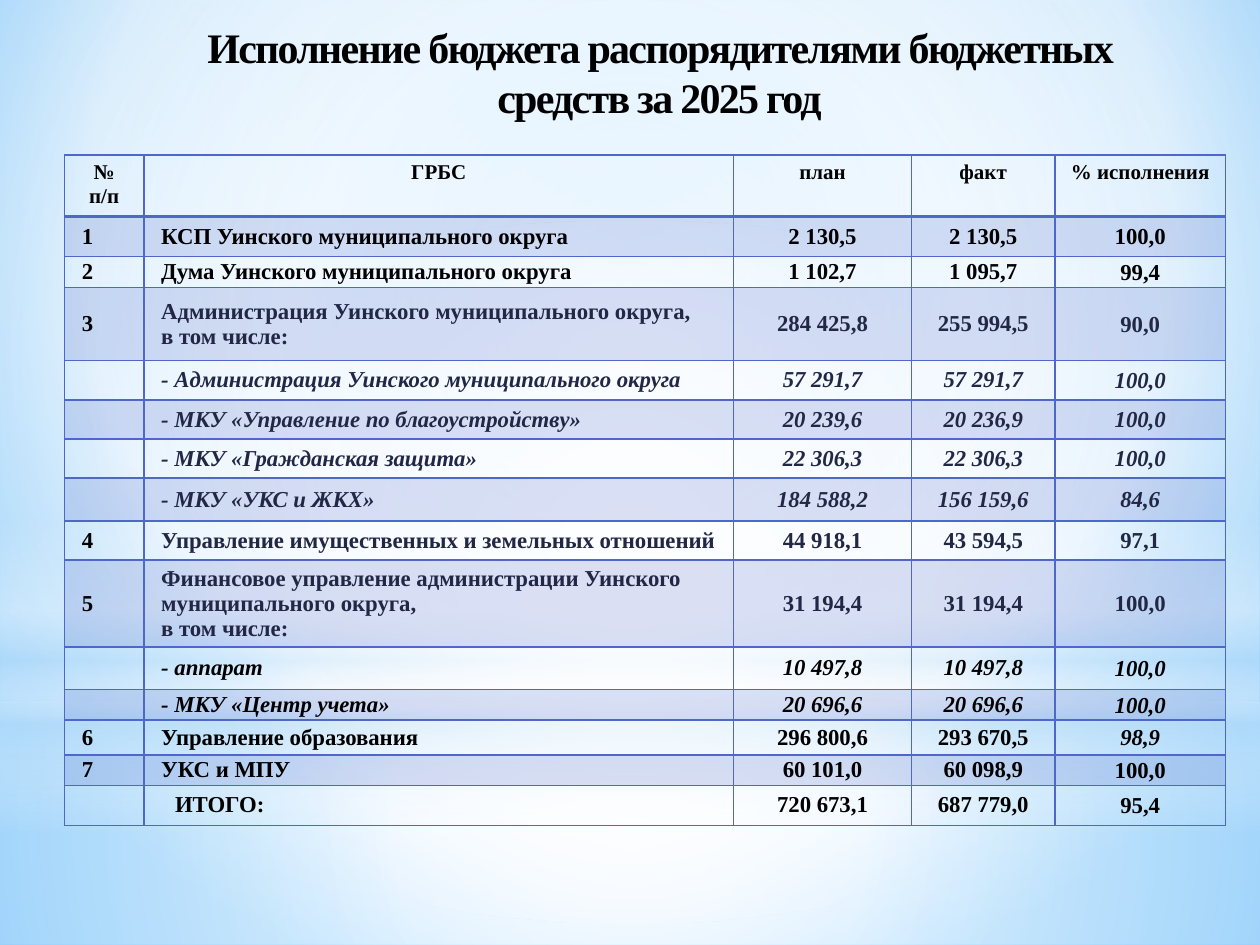
from dataclasses import dataclass
from lxml.etree import SubElement
from pptx import Presentation
from pptx.dml.color import RGBColor
from pptx.enum.shapes import MSO_SHAPE
from pptx.enum.text import MSO_ANCHOR, PP_ALIGN
from pptx.oxml.ns import qn
from pptx.util import Cm, Pt


@dataclass(frozen=True)
class Theme:
    font: str = "Times New Roman"
    black: str = "000000"
    ink: str = "212745"
    accent: str = "4E67C8"
    white: str = "FFFFFF"
    pale: str = "B4DCFA"
    sky: str = "9ED5FF"
    deep: str = "5BB9FF"
    title_size: float = 24
    header_size: float = 12
    body_size: float = 13
    band_opacity: int = 20
    plain_table: str = "{2D5ABB26-0587-4C30-8999-92F81FD0307C}"


CENTRE = (50, 50, 50, 50)
HEADERS = ["№ п/п", "ГРБС", "план", "факт", "% исполнения"]
COLUMN_WIDTHS = [1.6, 11.89, 3.58, 2.9, 3.43]
HEADER_HEIGHT = 1.24
ROWS = [
    (0.81, "1", "КСП Уинского муниципального округа", "2 130,5", "2 130,5", "100,0"),
    (0.63, "2", "Дума Уинского муниципального округа", "1 102,7", "1 095,7", "99,4"),
    (1.47, "3", "Администрация Уинского муниципального округа,\nв том числе:",
     "284 425,8", "255 994,5", "90,0"),
    (0.79, "", "- Администрация Уинского муниципального округа", "57 291,7", "57 291,7", "100,0"),
    (0.79, "", "- МКУ «Управление по благоустройству»", "20 239,6", "20 236,9", "100,0"),
    (0.79, "", "- МКУ «Гражданская защита»", "22 306,3", "22 306,3", "100,0"),
    (0.86, "", "- МКУ «УКС и ЖКХ»", "184 588,2", "156 159,6", "84,6"),
    (0.79, "4", "Управление имущественных и земельных отношений", "44 918,1", "43 594,5", "97,1"),
    (1.75, "5", "Финансовое управление администрации Уинского муниципального округа,\nв том числе:",
     "31 194,4", "31 194,4", "100,0"),
    (0.86, "", "- аппарат", "10 497,8", "10 497,8", "100,0"),
    (0.61, "", "- МКУ «Центр учета»", "20 696,6", "20 696,6", "100,0"),
    (0.71, "6", "Управление образования", "296 800,6", "293 670,5", "98,9"),
    (0.61, "7", "УКС и МПУ", "60 101,0", "60 098,9", "100,0"),
    (0.81, "", "ИТОГО:", "720 673,1", "687 779,0", "95,4"),
]
INK_ROWS = range(3, 10)


class SlideBuilder:
    def __init__(self, page, theme):
        self.page = page
        self.theme = theme

    def gradient(self, fill, host, stops, focus=None):
        fill.gradient()
        grad = next(host.iter(qn("a:gradFill")))
        for child in list(grad):
            grad.remove(child)
        stop_list = SubElement(grad, qn("a:gsLst"))
        for position, color, opacity in stops:
            stop = SubElement(stop_list, qn("a:gs"), pos=str(position * 1000))
            tone = SubElement(stop, qn("a:srgbClr"), val=color)
            SubElement(tone, qn("a:alpha"), val=str(opacity * 1000))
        if focus:
            route = SubElement(grad, qn("a:path"), path="circle")
            sides = {side: str(part * 1000) for side, part in zip("ltrb", focus)}
            SubElement(route, qn("a:fillToRect"), **sides)
        else:
            SubElement(grad, qn("a:lin"), ang="5400000", scaled="0")

    def background(self, stops, focus):
        self.gradient(self.page.background.fill, self.page.element, stops, focus)

    def glow(self, kind, top, height, stops, focus=None):
        shape = self.page.shapes.add_shape(kind, Cm(0), Cm(top), Cm(25.4), Cm(height))
        shape.shadow.inherit = False
        shape.line.fill.background()
        self.gradient(shape.fill, shape.element, stops, focus)

    def span(self, para, text, size, color, italic=False):
        span = para.add_run()
        span.text = text
        span.font.name = self.theme.font
        span.font.size = Pt(size)
        span.font.bold = True
        span.font.italic = italic
        span.font.color.rgb = RGBColor.from_string(color)
        return span

    def title(self, text, left, top, width, height):
        box = self.page.shapes.title
        box.element.getparent().append(box.element)
        box.left, box.top, box.width, box.height = Cm(left), Cm(top), Cm(width), Cm(height)
        box.text_frame.word_wrap = True
        box.text_frame.vertical_anchor = MSO_ANCHOR.TOP
        para = box.text_frame.paragraphs[0]
        para.alignment = PP_ALIGN.CENTER
        span = self.span(para, text, self.theme.title_size, self.theme.black)
        span.font._element.set("spc", "-100")

    def borders(self, cell, bottom):
        properties = cell._tc.get_or_add_tcPr()
        for edge in ("lnL", "lnR", "lnT", "lnB"):
            weight = bottom if edge == "lnB" else 1
            line = SubElement(properties, qn(f"a:{edge}"), w=str(Pt(weight)))
            solid = SubElement(line, qn("a:solidFill"))
            SubElement(solid, qn("a:srgbClr"), val=self.theme.accent)

    def shade(self, cell, banded):
        if not banded:
            cell.fill.background()
            return
        cell.fill.solid()
        cell.fill.fore_color.rgb = RGBColor.from_string(self.theme.accent)
        tone = next(cell._tc.tcPr.find(qn("a:solidFill")).iter(qn("a:srgbClr")))
        SubElement(tone, qn("a:alpha"), val=str(self.theme.band_opacity * 1000))

    def cell(self, cell, text, size, color, italic=False, indent=None):
        for index, line in enumerate(text.split("\n")):
            frame = cell.text_frame
            para = frame.add_paragraph() if index else frame.paragraphs[0]
            if indent is None:
                para.alignment = PP_ALIGN.CENTER
            else:
                para._p.get_or_add_pPr().set("marL", str(Cm(indent)))
            if line:
                self.span(para, line, size, color, italic)
            else:
                SubElement(para._p, qn("a:endParaRPr"), sz=str(size * 100))

    def table(self, left, top):
        theme = self.theme
        heights = [HEADER_HEIGHT] + [row[0] for row in ROWS]
        frame = self.page.shapes.add_table(
            len(heights), len(HEADERS), Cm(left), Cm(top),
            Cm(sum(COLUMN_WIDTHS)), Cm(sum(heights)))
        table = frame.table
        next(frame.element.iter(qn("a:tableStyleId"))).text = theme.plain_table
        for column, width in zip(table.columns, COLUMN_WIDTHS):
            column.width = Cm(width)
        for row, height in zip(table.rows, heights):
            row.height = Cm(height)
        for column, text in enumerate(HEADERS):
            cell = table.cell(0, column)
            self.borders(cell, 2)
            self.shade(cell, False)
            self.cell(cell, text, theme.header_size, theme.black)
        for number, (_, *texts) in enumerate(ROWS, 1):
            for column, text in enumerate(texts):
                cell = table.cell(number, column)
                cell.vertical_anchor = MSO_ANCHOR.MIDDLE
                cell.margin_left = cell.margin_right = Cm(0.03 if column == 4 else 0.15)
                cell.margin_top = Cm(0.03 if column == 4 else 0)
                cell.margin_bottom = Cm(0)
                self.borders(cell, 1)
                self.shade(cell, number % 2 == 1)
                color = theme.ink if column and number in INK_ROWS else theme.black
                italic = texts[1].startswith("-") or text == "98,9"
                indent = None if column > 1 else 0.48 if text == "ИТОГО:" else 0.2
                self.cell(cell, text, theme.body_size, color, italic, indent)


def main():
    theme = Theme()
    deck = Presentation()
    deck.slide_width, deck.slide_height = Cm(25.4), Cm(19.05)
    slide = SlideBuilder(deck.slides.add_slide(deck.slide_layouts[5]), theme)
    white, pale = theme.white, theme.pale
    slide.background([(0, theme.sky, 100), (69, white, 100), (100, theme.deep, 100)],
                     (20, 10, 20, 60))
    slide.glow(MSO_SHAPE.RECTANGLE, 14.17, 4.88,
               [(0, white, 91), (37, white, 76), (100, pale, 79)], CENTRE)
    slide.glow(MSO_SHAPE.RECTANGLE, 0, 14.17,
               [(0, white, 89), (48, white, 62), (100, pale, 79)], CENTRE)
    slide.glow(MSO_SHAPE.RECTANGLE, 10.46, 6.35,
               [(0, white, 0), (29, white, 30), (45, pale, 40),
                (55, white, 26), (65, pale, 60), (100, white, 0)])
    slide.glow(MSO_SHAPE.OVAL, 4.45, 14.17, [(0, white, 100), (56, white, 0)], CENTRE)
    slide.title("Исполнение бюджета распорядителями бюджетных средств за 2025 год",
                3.3, 0.3, 19.99, 2.44)
    slide.table(1.3, 3.12)
    deck.save("out.pptx")


if __name__ == "__main__":
    main()
